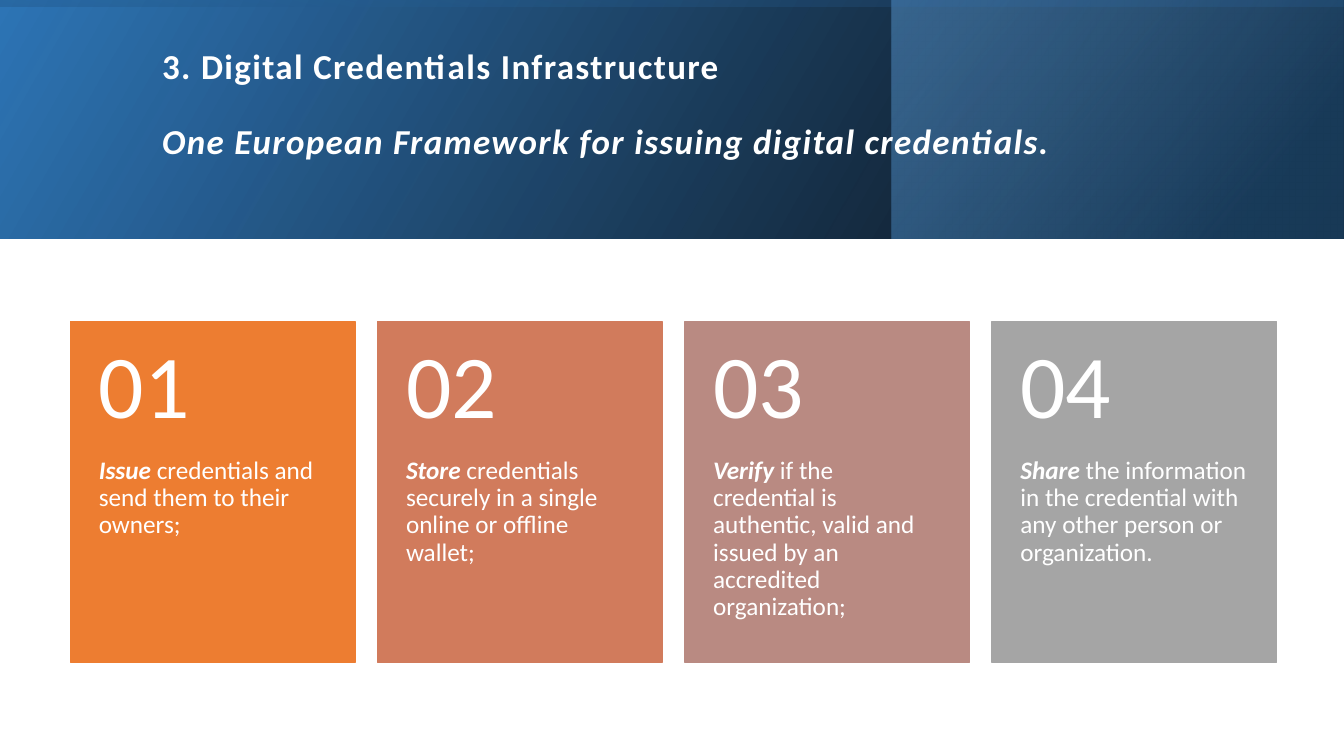
from lxml.etree import SubElement
from pptx import Presentation
from pptx.dml.color import RGBColor
from pptx.enum.shapes import MSO_SHAPE
from pptx.enum.text import MSO_ANCHOR
from pptx.oxml.ns import qn
from pptx.util import Inches, Pt


def rgb(hex_color):
    return RGBColor.from_string(hex_color)


def add_text(box, insets, anchor, lines):
    """Place a text box; each line is a list of (text, font values) runs."""
    frame = slide.shapes.add_textbox(*map(Inches, box)).text_frame
    left, top, right, bottom = map(Inches, insets)
    layout = {"word_wrap": True, "vertical_anchor": anchor, "margin_left": left,
              "margin_top": top, "margin_right": right, "margin_bottom": bottom}
    for name, value in layout.items():
        setattr(frame, name, value)
    for number, runs in enumerate(lines):
        paragraph = frame.add_paragraph() if number else frame.paragraphs[0]
        paragraph.line_spacing = 0.9
        for text, values in runs:
            run = paragraph.add_run()
            run.text = text
            run.font.name = "Calibri"
            run.font.color.rgb = rgb("FFFFFF")
            for name, value in values.items():
                setattr(run.font, name, value)
    return frame


presentation = Presentation()
presentation.slide_width = Inches(13.33)
presentation.slide_height = Inches(7.5)
slide = presentation.slides.add_slide(presentation.slide_layouts[6])

# Header: three translucent gradients; stops are (position %, colour, opacity %)
header_layers = [
    ((0, 0, 13.33, 2.37), 0, 330, [(0, "000000", 96), (100, "2E75B6", 100)]),
    ((8.84, 0, 4.48, 2.37), 0, 320, [(19, "1F4E79", 68), (100, "5B9BD5", 48)]),
    ((5.48, -5.48, 2.37, 13.33), 270, 350, [(23, "2E75B6", 16), (99, "000000", 45)]),
]
for box, rotation, angle, stops in header_layers:
    layer = slide.shapes.add_shape(MSO_SHAPE.RECTANGLE, *map(Inches, box))
    layer.shadow.inherit = False
    layer.rotation = rotation
    layer.line.fill.background()
    layer.fill.gradient()
    layer.fill.gradient_angle = 360 - angle
    layer.element.spPr.find(qn("a:xfrm")).set("flipH", "1")
    stop_list = layer.element.spPr.find(qn("a:gradFill")).find(qn("a:gsLst"))
    for old_stop in list(stop_list):
        stop_list.remove(old_stop)
    for position, color, opacity in stops:
        stop = SubElement(stop_list, qn("a:gs"), pos=str(position * 1000))
        stop_color = SubElement(stop, qn("a:srgbClr"), val=color)
        SubElement(stop_color, qn("a:alpha"), val=str(opacity * 1000))

heading = {"size": Pt(25), "bold": True}
title = add_text((1.51, 0.38, 10.63, 1.72), (0.1, 0.05, 0.1, 0.43), MSO_ANCHOR.MIDDLE, [
    [("3. Digital Credentials Infrastructure", heading)],
    [("One European Framework for issuing digital credentials.",
      {**heading, "italic": True})],
])
title.paragraphs[1].space_before = Pt(27)
for paragraph in title.paragraphs:
    for run in paragraph.runs:
        run.font.element.set("spc", "100") if hasattr(run.font, "element") else \
            run._r.get_or_add_rPr().set("spc", "100")

# Four numbered cards
steps = [
    ("ED7D31", "Issue", " credentials and send them to their owners;"),
    ("D17B5C", "Store", " credentials securely in a single online or offline wallet;"),
    ("B98A82", "Verify", " if the credential is authentic, valid and issued by an "
                         "accredited organization;"),
    ("A5A5A5", "Share", " the information in the credential with any other person "
                        "or organization."),
]
card_top, card_width, card_height, number_height = 3.19, 2.82, 3.38, 1.35
for index, (color, verb, rest) in enumerate(steps):
    left = 0.7 + index * (9.84 - 0.7) / 3
    card = slide.shapes.add_shape(MSO_SHAPE.RECTANGLE, Inches(left), Inches(card_top),
                                  Inches(card_width), Inches(card_height))
    card.shadow.inherit = False
    card.fill.solid()
    card.fill.fore_color.rgb = rgb(color)
    card.line.color.rgb = rgb(color)
    card.line.width = Pt(1)
    add_text((left, card_top + number_height, card_width, card_height - number_height),
             (0.28, 0, 0.28, 0.36), MSO_ANCHOR.TOP,
             [[(verb, {"size": Pt(18), "bold": True, "italic": True}),
               (rest, {"size": Pt(18)})]])
    add_text((left, card_top, card_width, number_height),
             (0.28, 0.18, 0.28, 0.18), MSO_ANCHOR.MIDDLE,
             [[(f"{index + 1:02}", {"size": Pt(64)})]])

presentation.save("out.pptx")
